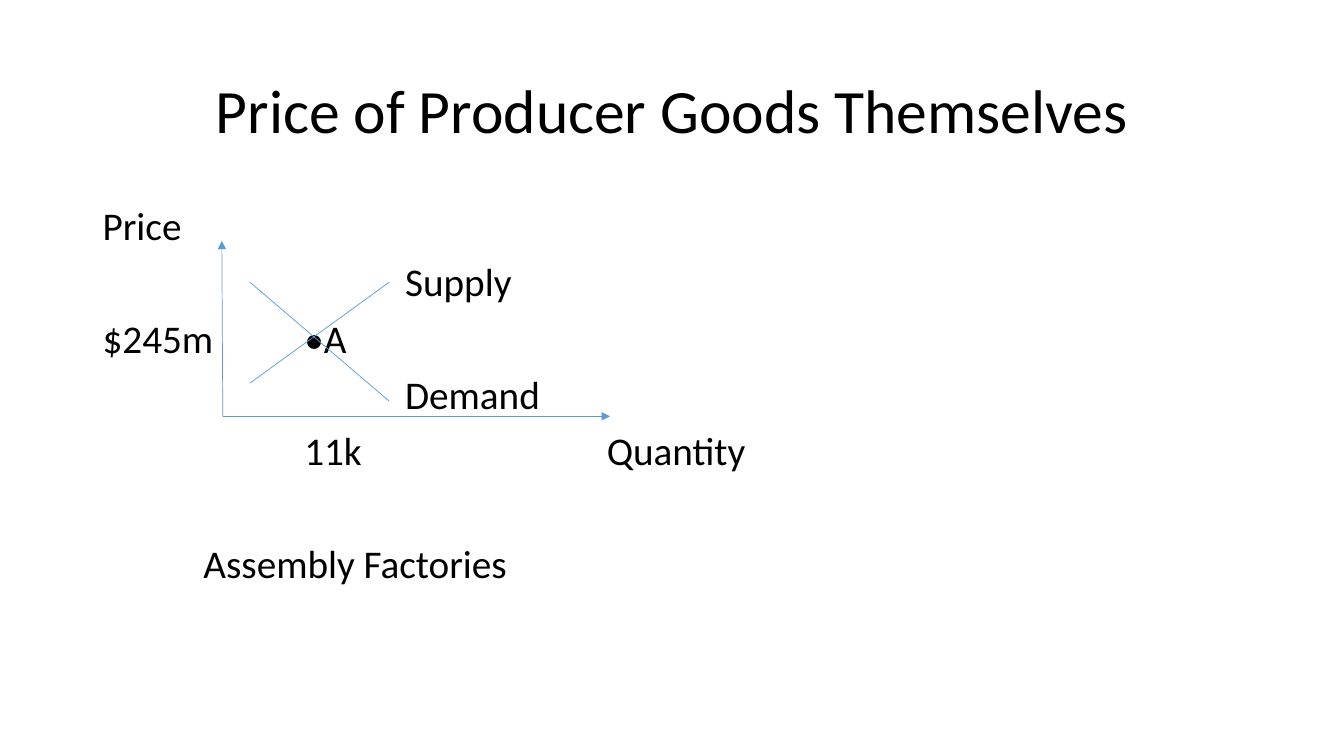
"""Build a slide with a supply and demand diagram for assembly factories."""
from lxml.etree import SubElement
from pptx import Presentation
from pptx.dml.color import RGBColor
from pptx.enum.shapes import MSO_CONNECTOR
from pptx.enum.text import MSO_ANCHOR, MSO_AUTO_SIZE, PP_ALIGN
from pptx.oxml.ns import qn
from pptx.util import Inches, Pt

TITLE = "Price of Producer Goods Themselves"
LABELS = [
    ("Price", [], 1),
    ("\tSupply", [3], 1),
    ("$245m\t•A", [2], 1),
    ("\tDemand", [3], 1),
    ("\t11k\tQuantity", [2, 5], 1),
    ("\tAssembly Factories", [1], 2),
]
ORIGIN = (2.21, 4.13)
AXES = [(ORIGIN, (2.2, 2.39)), (ORIGIN, (6.05, 4.13))]
CURVES = [((2.48, 2.8), (3.86, 3.98)), ((2.48, 3.8), (3.86, 2.8))]

COLORS = {"text": "000000", "line": "5B9BD5", "page": "FFFFFF"}
FONT = "Calibri"
WIDTH, HEIGHT = 13.33, 7.5
MARGIN, CONTENT_WIDTH = 0.92, 11.5
TAB_COLUMN = 1
SPACE_BEFORE, ROW_PITCH = 10, 40.5


def color(name):
    return RGBColor.from_string(COLORS[name])


def place(box, top, height):
    box.left, box.top = Inches(MARGIN), Inches(top)
    box.width, box.height = Inches(CONTENT_WIDTH), Inches(height)
    box.text_frame.word_wrap = True
    box.text_frame.auto_size = MSO_AUTO_SIZE.NONE


def format_paragraph(para, size):
    para.line_spacing = 0.9
    for span in para.runs:
        span.font.name = FONT
        span.font.size = Pt(size)
        span.font.color.rgb = color("text")


def set_tab_stops(para, columns):
    stops = SubElement(para._p.get_or_add_pPr(), qn("a:tabLst"))
    for column in columns:
        SubElement(stops, qn("a:tab"), pos=str(Inches(column * TAB_COLUMN)), algn="l")


def add_title(page):
    title = page.shapes.title
    place(title, 0.4, 1.45)
    title.text_frame.text = TITLE
    title.text_frame.vertical_anchor = MSO_ANCHOR.MIDDLE
    para = title.text_frame.paragraphs[0]
    para.alignment = PP_ALIGN.CENTER
    format_paragraph(para, 44)


def add_labels(page):
    box = page.shapes.add_textbox(0, 0, 0, 0)
    place(box, 2, 4.76)
    frame = box.text_frame
    for index, (text, columns, rows) in enumerate(LABELS):
        para = frame.add_paragraph() if index else frame.paragraphs[0]
        para.text = text
        format_paragraph(para, 28)
        para.space_before = Pt(SPACE_BEFORE + (rows - 1) * ROW_PITCH)
        if columns:
            set_tab_stops(para, columns)


def add_line(page, start, end, arrow):
    points = [Inches(value) for value in (*start, *end)]
    line = page.shapes.add_connector(MSO_CONNECTOR.STRAIGHT, *points)
    line.line.color.rgb = color("line")
    line.line.width = Pt(0.5)
    if arrow:
        SubElement(line.line._get_or_add_ln(), qn("a:tailEnd"), type="triangle")
    SubElement(line._element.spPr, qn("a:effectLst"))


def main():
    deck = Presentation()
    deck.slide_width, deck.slide_height = Inches(WIDTH), Inches(HEIGHT)
    page = deck.slides.add_slide(deck.slide_layouts[5])
    page.background.fill.solid()
    page.background.fill.fore_color.rgb = color("page")
    add_title(page)
    add_labels(page)
    for lines, arrow in ((AXES, True), (CURVES, False)):
        for start, end in lines:
            add_line(page, start, end, arrow)
    deck.save("out.pptx")


if __name__ == "__main__":
    main()
